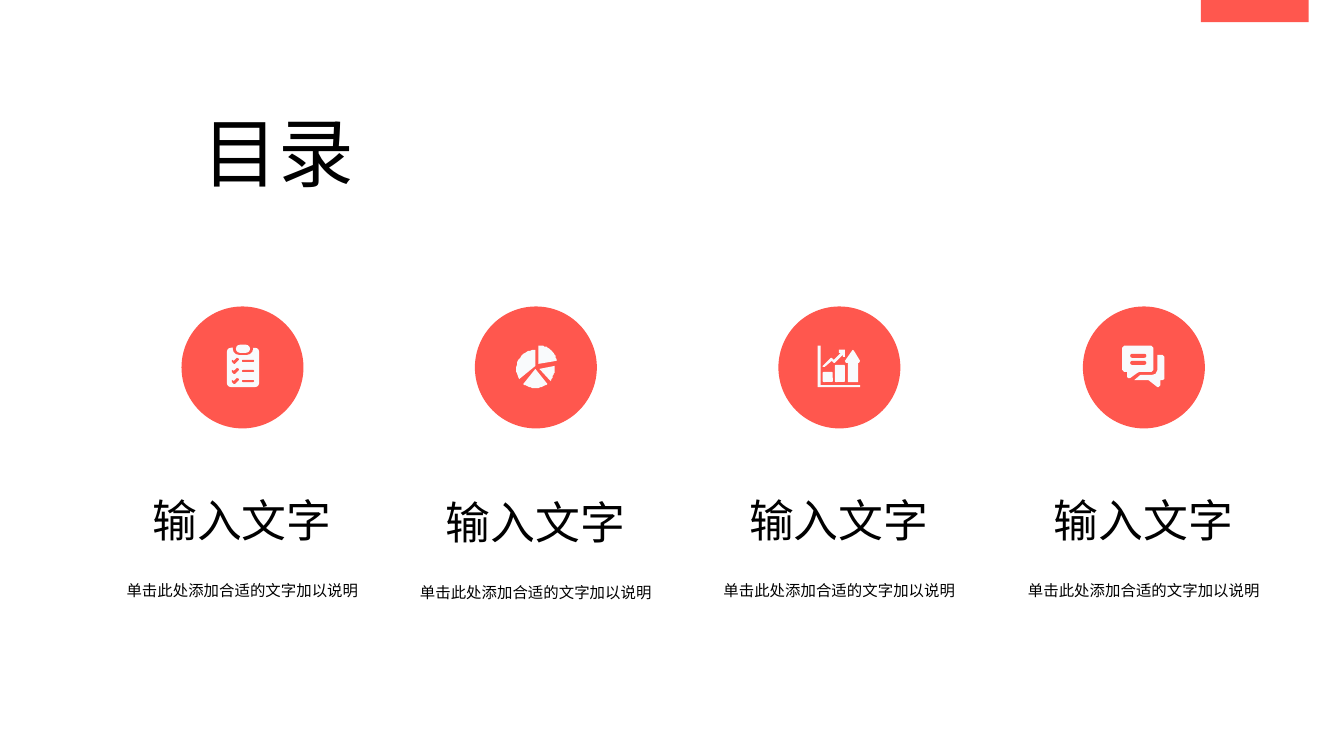
from math import cos, radians, sin

from lxml.etree import SubElement
from pptx import Presentation
from pptx.dml.color import RGBColor
from pptx.enum.shapes import MSO_SHAPE
from pptx.enum.text import MSO_ANCHOR, PP_ALIGN
from pptx.oxml.ns import qn
from pptx.util import Inches, Pt

RED = "FF574E"
PALE = "F9FAFC"
CJK_FONT = "Noto Sans CJK JP"
UNIT = Inches(0.01)
CIRCLE_TOP = 3.04
CIRCLE_SIZE = 1.21


def color(hex_string):
    return RGBColor.from_string(hex_string)


def paint(shape, fill):
    shape.shadow.inherit = False
    shape.fill.solid()
    shape.fill.fore_color.rgb = color(fill)
    shape.line.fill.background()


def add_block(slide, kind, left, top, width, height, fill):
    shape = slide.shapes.add_shape(
        kind, Inches(left), Inches(top), Inches(width), Inches(height))
    paint(shape, fill)
    return shape


def add_rounded(slide, origin, left, top, width, height, radius, fill=PALE):
    shape = add_block(
        slide, MSO_SHAPE.ROUNDED_RECTANGLE, origin + left / 100,
        CIRCLE_TOP + top / 100, width / 100, height / 100, fill)
    shape.adjustments[0] = radius / min(width, height)


def add_outline(slide, origin, points, fill=PALE):
    builder = slide.shapes.build_freeform(*points[0], scale=UNIT)
    builder.add_line_segments(points[1:], close=True)
    paint(builder.convert_to_shape(Inches(origin), Inches(CIRCLE_TOP)), fill)


def write_text(shape, text, *, size, font=CJK_FONT, align=PP_ALIGN.CENTER, wrap=True):
    frame = shape.text_frame
    frame.word_wrap = wrap
    frame.vertical_anchor = MSO_ANCHOR.TOP
    paragraph = frame.paragraphs[0]
    paragraph.alignment = align
    run = paragraph.add_run()
    run.text = text
    run.font.size = Pt(size)
    run.font.name = font
    run.font.color.rgb = color("000000")
    SubElement(run.font._element, qn("a:ea")).set("typeface", CJK_FONT)


def place(shape, left, top, width, height):
    shape.left, shape.top = Inches(left), Inches(top)
    shape.width, shape.height = Inches(width), Inches(height)


def add_label(slide, text, left, top, width, height, size):
    box = slide.shapes.add_textbox(
        Inches(left), Inches(top), Inches(width), Inches(height))
    write_text(box, text, size=size)


def wedge(tip, center, radius, start, end, steps=16):
    angles = [radians(start + (end - start) * step / steps) for step in range(steps + 1)]
    return [tip] + [(center[0] + radius * cos(angle), center[1] + radius * sin(angle))
                    for angle in angles]


def draw_checklist(slide, origin):
    add_rounded(slide, origin, 45, 41, 32, 39, 4)
    add_rounded(slide, origin, 51, 36, 20, 12, 6, RED)
    add_rounded(slide, origin, 54, 38, 14, 8, 4)
    check = [(50, 53), (52, 54), (55, 51), (57, 52), (57, 53), (53, 57), (52, 57), (50, 55)]
    for drop in (0, 10, 20):
        add_outline(slide, origin, [(x, y + drop) for x, y in check], RED)
        add_rounded(slide, origin, 60, 53 + drop, 12, 2, 1, RED)


def draw_pie(slide, origin):
    center = (60, 62)
    add_outline(slide, origin, wedge((63, 57), (64, 56), 17, -93, -8))
    add_outline(slide, origin, wedge((64, 62), center, 19, -10, 38))
    add_outline(slide, origin, wedge((60, 62), center, 19, 50, 130))
    add_outline(slide, origin, wedge((60, 59), center, 19, 148, 270))


def draw_growth(slide, origin):
    add_outline(slide, origin, [
        (39, 39), (42, 39), (42, 78), (81, 78), (81, 80), (39, 80)])
    add_outline(slide, origin, [
        (44, 59), (52, 51), (53, 51), (55, 53), (62, 46), (60, 46), (60, 43), (66, 43),
        (66, 50), (64, 50), (64, 48), (56, 56), (55, 56), (53, 54), (46, 60), (44, 60)])
    add_rounded(slide, origin, 44, 65, 10, 10, 1)
    add_rounded(slide, origin, 56, 58, 10, 17, 1)
    add_outline(slide, origin, [
        (69, 75), (69, 56), (67, 56), (66, 54), (73, 44), (74, 43), (75, 44),
        (81, 54), (80, 56), (79, 56), (79, 75)])


def draw_chat(slide, origin):
    add_outline(slide, origin, [
        (79, 48), (81, 50), (81, 72), (79, 73), (77, 73), (77, 78), (75, 80), (74, 80),
        (65, 73), (52, 73), (51, 73), (57, 68), (68, 68), (72, 67), (74, 63), (74, 48)])
    add_outline(slide, origin, [
        (41, 39), (68, 39), (70, 41), (70, 63), (68, 65), (56, 65), (54, 66), (47, 71),
        (45, 71), (44, 70), (44, 65), (41, 65), (39, 63), (39, 41)])
    for top in (47, 54):
        add_rounded(slide, origin, 47, top, 16, 4, 2, RED)


def add_entry(slide, left, drop, draw_icon):
    add_block(slide, MSO_SHAPE.OVAL, left, CIRCLE_TOP, CIRCLE_SIZE, CIRCLE_SIZE, RED)
    draw_icon(slide, left)
    add_label(slide, "输入文字", left - 0.45, 4.84 + drop, 2.1, 0.64, 32)
    add_label(slide, "单击此处添加合适的文字加以说明",
              left - 0.65, 5.72 + drop, 2.51, 0.29, 11)


def main():
    presentation = Presentation()
    presentation.slide_width = Inches(13.33)
    presentation.slide_height = Inches(7.5)
    slide = presentation.slides.add_slide(presentation.slide_layouts[5])

    add_block(slide, MSO_SHAPE.RECTANGLE, 11.91, 0, 1.07, 0.22, RED)
    title = slide.shapes.title
    place(title, 1.91, 1, 1.85, 1.01)
    write_text(title, "目录", size=54, font="Calibri", align=PP_ALIGN.LEFT, wrap=False)

    entries = [
        (1.8, 0, draw_checklist),
        (4.71, 0.02, draw_pie),
        (7.72, 0, draw_growth),
        (10.74, 0, draw_chat),
    ]
    for left, drop, draw_icon in entries:
        add_entry(slide, left, drop, draw_icon)

    presentation.save("out.pptx")


if __name__ == "__main__":
    main()
